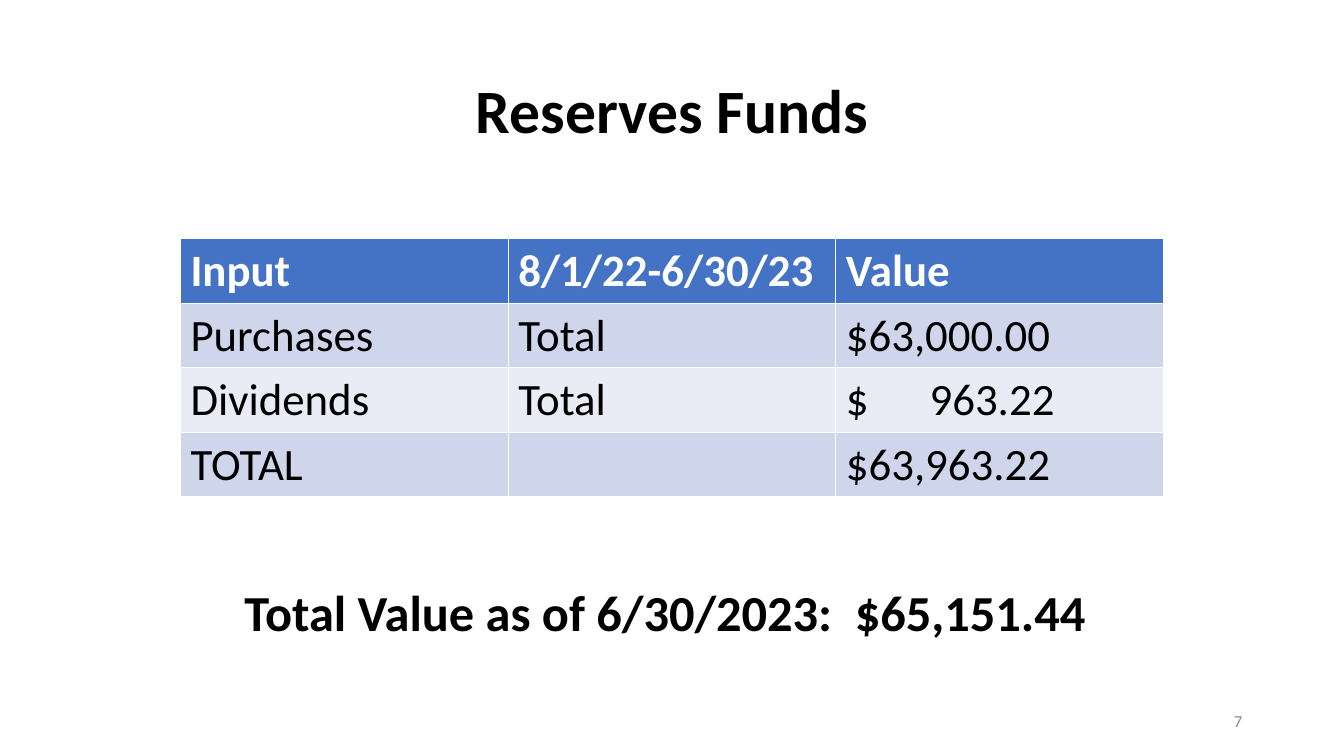
from dataclasses import dataclass

from lxml import etree
from pptx import Presentation
from pptx.dml.color import RGBColor
from pptx.enum.text import MSO_ANCHOR, PP_ALIGN
from pptx.oxml.ns import qn
from pptx.util import Inches, Pt

LEFT, CENTER, RIGHT = PP_ALIGN.LEFT, PP_ALIGN.CENTER, PP_ALIGN.RIGHT
TOP, MIDDLE = MSO_ANCHOR.TOP, MSO_ANCHOR.MIDDLE


@dataclass(frozen=True)
class Theme:
    """Colours, font and type sizes of the slide."""
    font: str = "Calibri"
    ink: str = "000000"
    white: str = "FFFFFF"
    muted: str = "8C8C8C"
    header: str = "4472C4"
    bands: tuple = ("CFD5EA", "E9EBF5")
    title_size: int = 44
    summary_size: int = 36
    table_size: int = 32
    number_size: int = 12


class SlideBuilder:
    """Adds styled elements to the current slide."""

    def __init__(self, slide, theme):
        self.slide = slide
        self.theme = theme

    def set_wording(self, paragraph, wording, size, color, bold=False, align=LEFT):
        """Fill a paragraph with styled wording."""
        paragraph.text = wording
        paragraph.alignment = align
        font = paragraph.font
        font.name, font.size, font.bold = self.theme.font, Pt(size), bold
        font.color.rgb = RGBColor.from_string(color)

    def text(self, wording, box, size, color, bold=False, align=CENTER,
             anchor=MIDDLE, spacing=1.0):
        """Add a single-paragraph text box."""
        frame = self.slide.shapes.add_textbox(*map(Inches, box)).text_frame
        frame.word_wrap = True
        frame.vertical_anchor = anchor
        paragraph = frame.paragraphs[0]
        self.set_wording(paragraph, wording, size, color, bold, align)
        paragraph.line_spacing = spacing

    def tab_stop(self, paragraph, position):
        """Give a paragraph one left tab stop."""
        stops = etree.Element(qn("a:tabLst"))
        etree.SubElement(stops, qn("a:tab"), pos=str(Inches(position)), algn="l")
        paragraph._p.get_or_add_pPr().insert(0, stops)

    def table(self, rows, box, amount_tab):
        """Add a table with a header row and banded body rows."""
        theme = self.theme
        table = self.slide.shapes.add_table(
            len(rows), len(rows[0]), *map(Inches, box)).table
        for r, row in enumerate(rows):
            is_header = r == 0
            fill = theme.header if is_header else theme.bands[(r - 1) % 2]
            color = theme.white if is_header else theme.ink
            for c, wording in enumerate(row):
                cell = table.cell(r, c)
                cell.fill.solid()
                cell.fill.fore_color.rgb = RGBColor.from_string(fill)
                paragraph = cell.text_frame.paragraphs[0]
                self.set_wording(paragraph, wording, theme.table_size, color,
                                 is_header)
                if "\t" in wording:
                    self.tab_stop(paragraph, amount_tab)


def main():
    """Build the reserves funds slide."""
    theme = Theme()
    presentation = Presentation()
    presentation.slide_width = Inches(13.33)
    presentation.slide_height = Inches(7.5)
    slide = presentation.slides.add_slide(presentation.slide_layouts[6])
    builder = SlideBuilder(slide, theme)

    builder.text("Reserves Funds", (0.92, 0.4, 11.5, 1.45),
                 theme.title_size, theme.ink, bold=True, spacing=0.9)
    reserves = [
        ("Input", "8/1/22-6/30/23", "Value"),
        ("Purchases", "Total", "$63,000.00"),
        ("Dividends", "Total", "$\t963.22"),
        ("TOTAL", "", "$63,963.22"),
    ]
    builder.table(reserves, (1.79, 2.37, 9.75, 2.56), amount_tab=0.83)
    builder.text("7", (9.42, 6.95, 3, 0.4), theme.number_size, theme.muted,
                 align=RIGHT)
    builder.text("Total Value as of 6/30/2023:  $65,151.44",
                 (1.81, 5.72, 9.58, 0.71), theme.summary_size, theme.ink,
                 bold=True, anchor=TOP)
    presentation.save("out.pptx")


if __name__ == "__main__":
    main()
